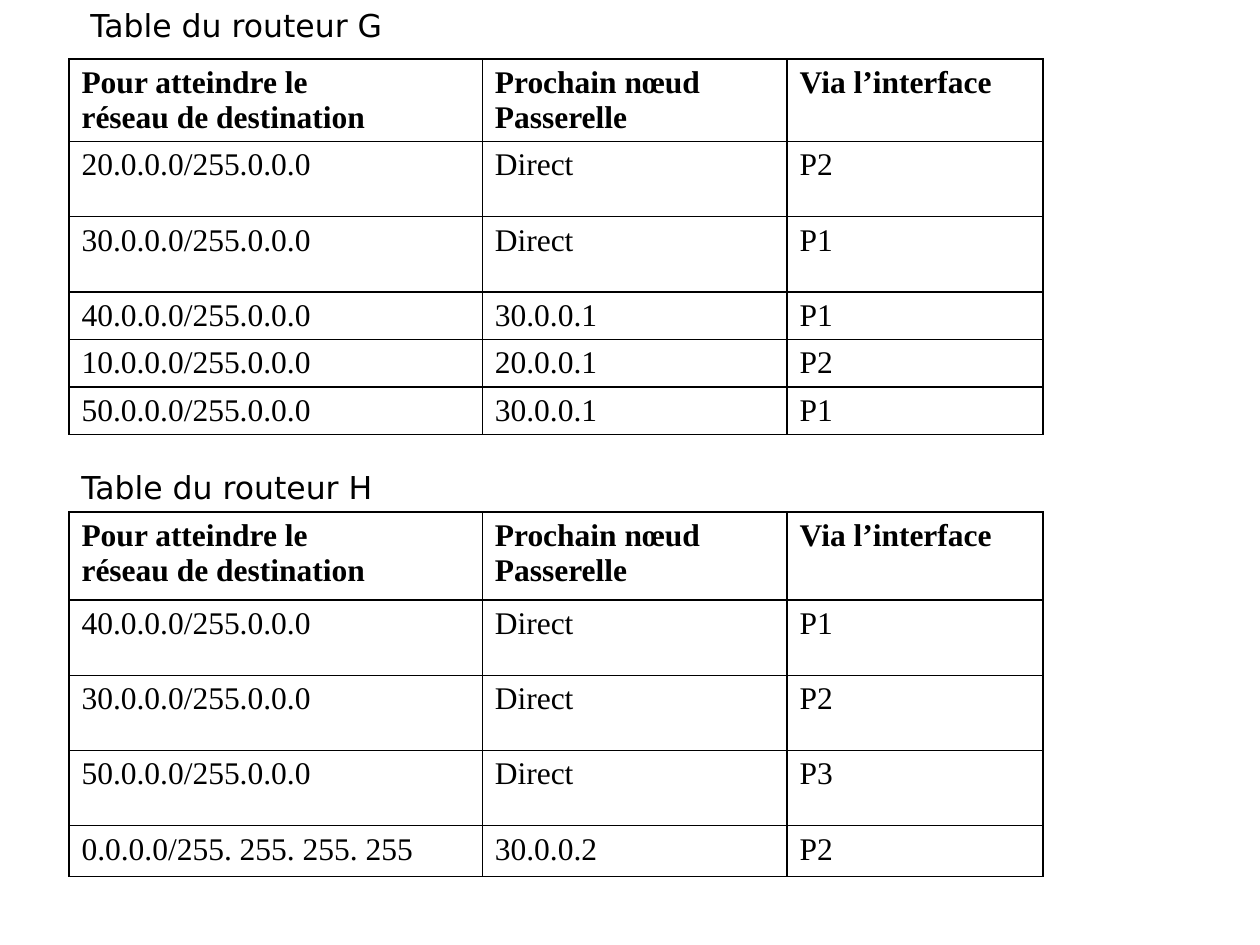
import pptx
import pptx.dml.color
import pptx.enum.text
import pptx.oxml
import pptx.oxml.ns
import pptx.util

Pt = pptx.util.Pt
BLACK = pptx.dml.color.RGBColor(0, 0, 0)
WHITE = pptx.dml.color.RGBColor(255, 255, 255)

HEADER = ("Pour atteindre le\nréseau de destination", "Prochain nœud Passerelle", "Via l’interface")
COLUMN_WIDTHS = (236.2, 174.2, 146.2)
TABLE_LEFT = 39.4

ROUTES_G = (
    ("20.0.0.0/255.0.0.0", "Direct", "P2"),
    ("30.0.0.0/255.0.0.0", "Direct", "P1"),
    ("40.0.0.0/255.0.0.0", "30.0.0.1", "P1"),
    ("10.0.0.0/255.0.0.0", "20.0.0.1", "P2"),
    ("50.0.0.0/255.0.0.0", "30.0.0.1", "P1"),
)
ROUTES_H = (
    ("40.0.0.0/255.0.0.0", "Direct", "P1"),
    ("30.0.0.0/255.0.0.0", "Direct", "P2"),
    ("50.0.0.0/255.0.0.0", "Direct", "P3"),
    ("0.0.0.0/255. 255. 255. 255", "30.0.0.2", "P2"),
)


class RoutingSlide:
    caption_font = "DejaVu Sans"
    table_font = "Times New Roman"
    text_size = 18
    border_width = 1

    def __init__(self, slide):
        self.slide = slide

    def add_lines(self, frame, text, font_name, bold=False):
        for index, line in enumerate(text.split("\n")):
            paragraph = frame.add_paragraph() if index else frame.paragraphs[0]
            run = paragraph.add_run()
            run.text = line
            run.font.name = font_name
            run.font.size = Pt(self.text_size)
            run.font.bold = bold
            run.font.color.rgb = BLACK

    def caption(self, text, left, top, width):
        box = self.slide.shapes.add_textbox(Pt(left), Pt(top), Pt(width), Pt(28.8))
        box.text_frame.word_wrap = False
        box.text_frame.auto_size = pptx.enum.text.MSO_AUTO_SIZE.SHAPE_TO_FIT_TEXT
        self.add_lines(box.text_frame, text, self.caption_font)

    def border(self, cell):
        properties = cell._tc.get_or_add_tcPr()
        for position, side in enumerate(("lnL", "lnR", "lnT", "lnB")):
            line = pptx.oxml.parse_xml(
                f'<a:{side} {pptx.oxml.ns.nsdecls("a")} w="{Pt(self.border_width)}">'
                f'<a:solidFill><a:srgbClr val="{BLACK}"/></a:solidFill></a:{side}>'
            )
            properties.insert(position, line)

    def routing_table(self, routes, top, row_heights):
        rows = (HEADER, *routes)
        table = self.slide.shapes.add_table(
            len(rows), len(HEADER), Pt(TABLE_LEFT), Pt(top),
            Pt(sum(COLUMN_WIDTHS)), Pt(sum(row_heights)),
        ).table
        table.first_row = False
        table.horz_banding = False
        for column, width in zip(table.columns, COLUMN_WIDTHS):
            column.width = Pt(width)
        for row_index, (values, height) in enumerate(zip(rows, row_heights)):
            table.rows[row_index].height = Pt(height)
            for column_index, value in enumerate(values):
                cell = table.cell(row_index, column_index)
                cell.fill.solid()
                cell.fill.fore_color.rgb = WHITE
                self.border(cell)
                self.add_lines(cell.text_frame, value, self.table_font, bold=row_index == 0)


def main():
    deck = pptx.Presentation()
    deck.slide_width, deck.slide_height = Pt(720), Pt(540)
    page = RoutingSlide(deck.slides.add_slide(deck.slide_layouts[6]))
    page.routing_table(ROUTES_G, 33.8, (47, 43, 43, 27, 27, 27))
    page.caption("Table du routeur G", 44.6, 0, 191.5)
    page.caption("Table du routeur H", TABLE_LEFT, 264.2, 185)
    page.routing_table(ROUTES_H, 292.5, (50, 43, 43, 43, 29))
    deck.save("out.pptx")


if __name__ == "__main__":
    main()
